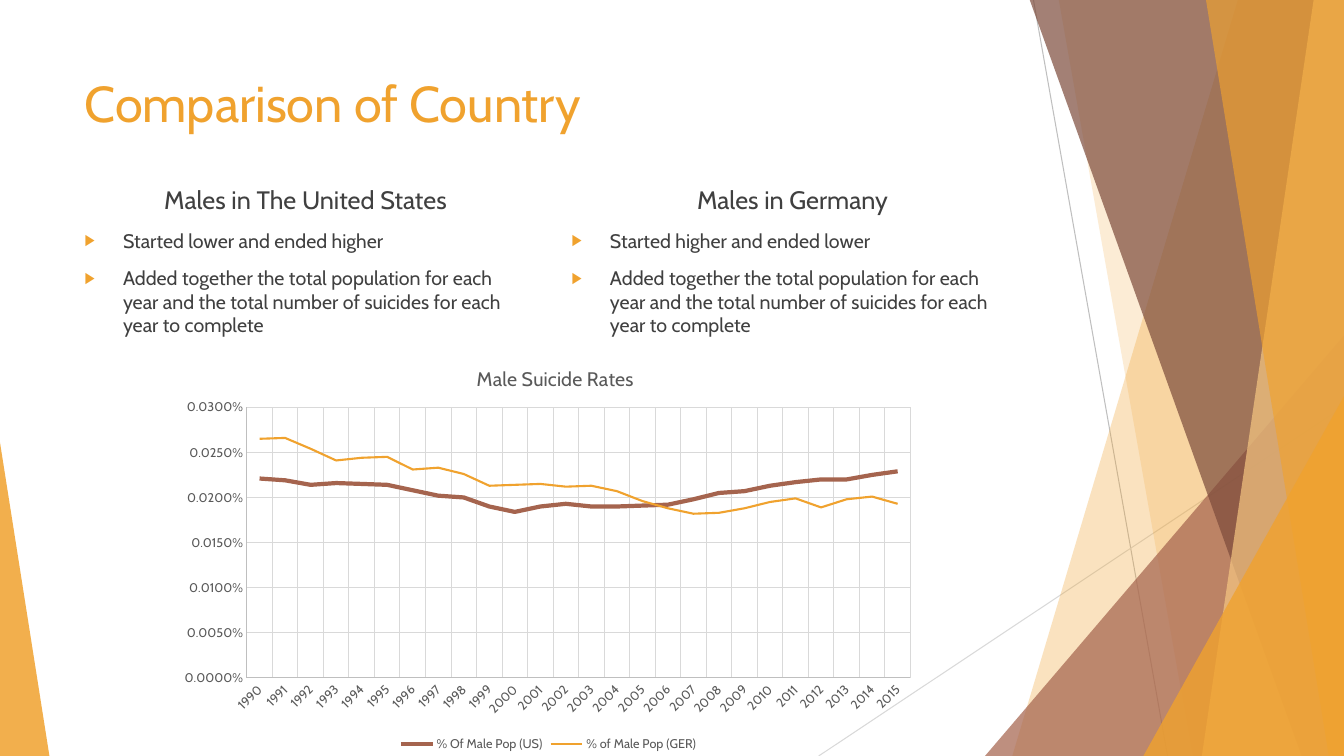
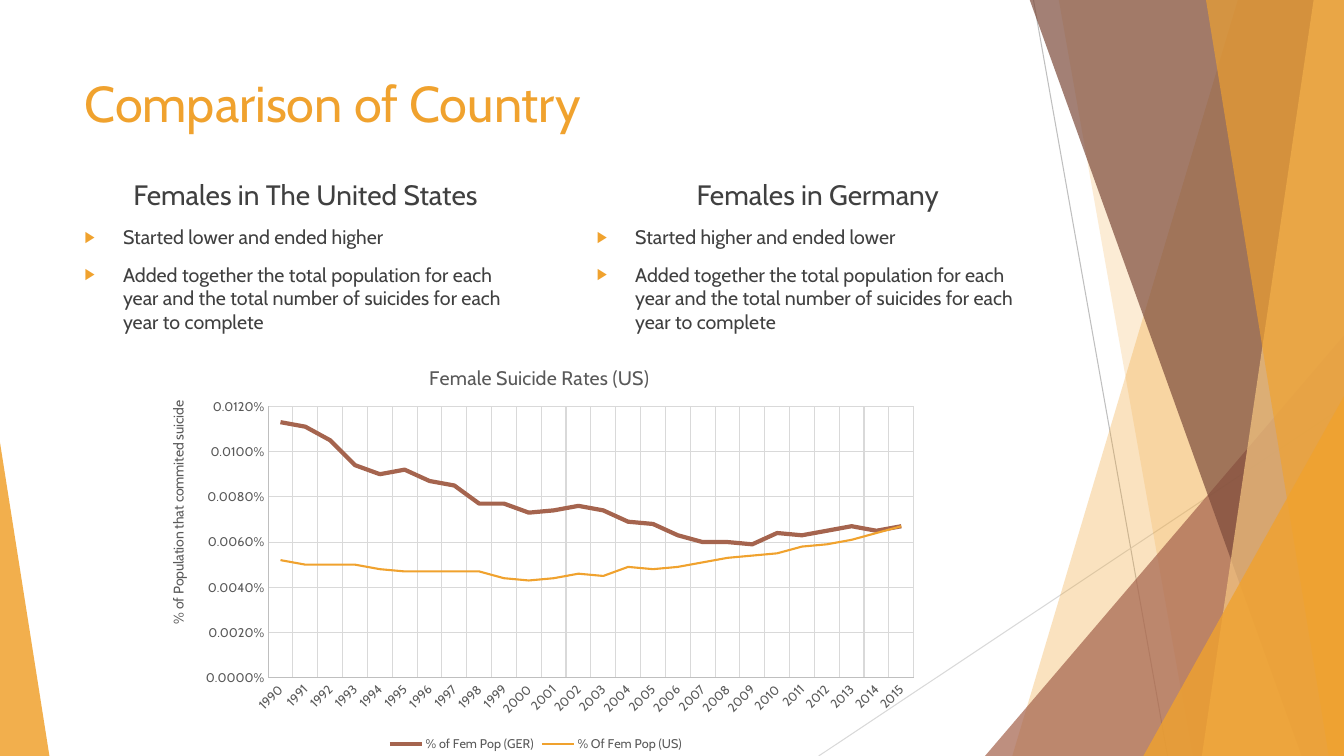
from lxml import etree
from pptx import Presentation
from pptx import util as u
from pptx.chart.data import CategoryChartData
from pptx.dml.color import RGBColor
from pptx.enum import chart as ch, shapes, text
from pptx.oxml import parse_xml
from pptx.oxml.ns import nsdecls, qn

FONT = "Cabin"
ORANGE, BROWN, DARK_BROWN, PALE = "F0A22E", "A5644E", "7C4B3B", "F6C782"
TEXT, CHART_TEXT, AXIS, GRID = "404040", "595959", "BFBFBF", "D9D9D9"
W, H = 13.33, 7.5
YEARS = [str(y) for y in range(1990, 2016)]
METHOD = ("Added together the total population for each year and the total "
          "number of suicides for each year to complete")
LOWER, HIGHER = "Started lower and ended higher", "Started higher and ended lower"

MALE_US = [221, 219, 214, 216, 215, 214, 208, 202, 200, 190, 184, 190, 193,
           190, 190, 191, 192, 198, 205, 207, 213, 217, 220, 220, 225, 229]
MALE_GER = [265, 266, 254, 241, 244, 245, 231, 233, 226, 213, 214, 215, 212,
            213, 207, 196, 188, 182, 183, 188, 195, 199, 189, 198, 201, 193]
FEM_GER = [113, 111, 105, 94, 90, 92, 87, 85, 77, 77, 73, 74, 76,
           74, 69, 68, 63, 60, 60, 59, 64, 63, 65, 67, 65, 67]
FEM_US = [52, 50, 50, 50, 48, 47, 47, 47, 47, 44, 43, 44, 46,
          45, 49, 48, 49, 51, 53, 54, 55, 58, 59, 61, 64, 67]


def rgb(value):
    return RGBColor.from_string(value)


def inches(*values):
    return [u.Inches(v) for v in values]


def style_font(font, size, color):
    font.name, font.size, font.bold = FONT, u.Pt(size), False
    font.color.rgb = rgb(color)


def style_line(line, color, width):
    line.color.rgb = rgb(color)
    line.width = u.Pt(width)


def tint(sp, color, alpha):
    sp.shadow.inherit = False
    sp.line.fill.background()
    sp.fill.solid()
    sp.fill.fore_color.rgb = rgb(color)
    clr = sp.fill._xPr.find(".//" + qn("a:srgbClr"))
    etree.SubElement(clr, qn("a:alpha")).set("val", str(alpha * 1000))


def add_line(group, start, end, color):
    c = group.shapes.add_connector(shapes.MSO_CONNECTOR.STRAIGHT,
                                   *inches(*start, *end))
    style_line(c.line, color, 0.75)
    etree.SubElement(c._element.spPr, qn("a:effectLst"))


def add_band(group, top_x, bottom_x, color, alpha):
    points = [inches(*p) for p in
              ((top_x, -0.01), (W, -0.01), (W, H), (bottom_x, H))]
    fb = group.shapes.build_freeform(*points[0])
    fb.add_line_segments(points[1:], close=True)
    tint(fb.convert_to_shape(), color, alpha)


def add_triangle(group, left, top, width, apex, color, alpha):
    sp = group.shapes.add_shape(shapes.MSO_SHAPE.ISOSCELES_TRIANGLE,
                                *inches(left, top, width, H - top))
    sp.adjustments[0] = apex
    tint(sp, color, alpha)


def decorate_layout(layout, s):
    group = s.shapes.add_group_shape()
    add_line(group, (10.25, 0), (11.58, H), AXIS)
    add_line(group, (W, 4.03), (8.12, H), GRID)
    add_band(group, 12.28, 10.04, ORANGE, 30)
    add_band(group, 10.5, 11.83, ORANGE, 20)
    add_triangle(group, 9.77, 3.33, 3.56, 1, BROWN, 72)
    add_band(group, 10.21, 12.91, DARK_BROWN, 70)
    add_band(group, 13.03, 11.92, PALE, 70)
    add_band(group, 11.96, 13.18, ORANGE, 65)
    add_triangle(group, 11.34, 3.93, 1.99, 1, ORANGE, 80)
    add_triangle(group, 0, 4.39, 0.49, 0, ORANGE, 85)
    for i, el in enumerate(group._element.iter(qn("p:cNvPr")), 101):
        el.set("id", str(i))
    layout.shapes._spTree.insert(2, group._element)


def place(sp, left, top, width, height):
    sp.left, sp.top, sp.width, sp.height = inches(left, top, width, height)


def setup_text(sp, *lines):
    tf = sp.text_frame
    tf.text = "\n".join(lines)
    tf.word_wrap = True
    tf.auto_size = text.MSO_AUTO_SIZE.NONE
    tf.vertical_anchor = text.MSO_ANCHOR.TOP
    return tf.paragraphs


def set_title(s, title):
    p, = setup_text(s.shapes.title, title)
    p.alignment = text.PP_ALIGN.LEFT
    style_font(p.runs[0].font, 36, ORANGE)


def set_bullet(p, indent):
    pPr = p._p.get_or_add_pPr()
    pPr.set("marL", str(u.Inches(indent)))
    pPr.set("indent", str(-u.Inches(indent)))
    if not indent:
        etree.SubElement(pPr, qn("a:buNone"))
        return
    clr = etree.SubElement(pPr, qn("a:buClr"))
    etree.SubElement(clr, qn("a:srgbClr")).set("val", ORANGE)
    etree.SubElement(pPr, qn("a:buSzPct")).set("val", "80000")
    etree.SubElement(pPr, qn("a:buChar")).set("char", "▶")


def fill_column(sp, left, top, heading, size, finding):
    place(sp, left, top, 4.58, 4.24)
    for i, p in enumerate(setup_text(sp, heading, finding, METHOD)):
        set_bullet(p, 0.38 if i else 0)
        p.space_before = u.Pt(10 if i else 0)
        p.alignment = text.PP_ALIGN.LEFT if i else text.PP_ALIGN.CENTER
        style_font(p.runs[0].font, 14 if i else size, TEXT)


def set_layout(parent, after, **fractions):
    old = parent.find(qn("c:layout"))
    if old is not None:
        parent.remove(old)
    target = "<c:layoutTarget val='inner'/>" if "w" in fractions else ""
    modes = "".join(f"<c:{k}Mode val='edge'/>" for k in "xy")
    sizes = "".join(f"<c:{k} val='{v}'/>" for k, v in fractions.items())
    el = parse_xml(f"<c:layout {nsdecls('c')}><c:manualLayout>{target}"
                   f"{modes}{sizes}</c:manualLayout></c:layout>")
    if after is None:
        parent.insert(0, el)
    else:
        parent.find(qn(after)).addnext(el)


def set_chart_title(title, words, size, **position):
    title.text_frame.text = words
    style_font(title.text_frame.paragraphs[0].runs[0].font, size, CHART_TEXT)
    set_layout(title._element, "c:tx", **position)


def style_axis(axis):
    axis.major_tick_mark = axis.minor_tick_mark = ch.XL_TICK_MARK.NONE
    axis.has_major_gridlines = True
    style_line(axis.major_gridlines.format.line, GRID, 0.75)
    style_line(axis.format.line, AXIS, 0.75)
    style_font(axis.tick_labels.font, 9, CHART_TEXT)


def add_rate_chart(s, box, title, title_at, series, top, step, plot):
    data = CategoryChartData(number_format="0.0000%")
    data.categories = YEARS
    for name, per_million in series:
        data.add_series(name, [v / 1e6 for v in per_million])
    chart = s.shapes.add_chart(ch.XL_CHART_TYPE.LINE, *inches(*box), data).chart
    style_font(chart.font, 10, "000000")
    chart.has_title = True
    set_chart_title(chart.chart_title, title, 14, **title_at)
    chart.has_legend = True
    chart.legend.position = ch.XL_LEGEND_POSITION.BOTTOM
    chart.legend.include_in_layout = False
    style_font(chart.legend.font, 9, CHART_TEXT)
    cat, val = chart.category_axis, chart.value_axis
    style_axis(cat)
    style_axis(val)
    cat._element.find(qn("c:txPr")).find(qn("a:bodyPr")).set("rot", "-2700000")
    val.minimum_scale, val.maximum_scale, val.major_unit = 0, top, step
    val.tick_labels.number_format = "0.0000%"
    val.tick_labels.number_format_is_linked = False
    chart.plots[0].vary_by_categories = False
    for ser, color, width in zip(chart.plots[0].series, (BROWN, ORANGE), (3, 1.5)):
        ser.smooth = False
        ser.marker.style = ch.XL_MARKER_STYLE.NONE
        style_line(ser.format.line, color, width)
    set_layout(chart._chartSpace.find(".//" + qn("c:plotArea")), None, **plot)
    return chart


def add_comparison(prs, layout, group, size, top, right_left):
    s = prs.slides.add_slide(layout)
    set_title(s, "Comparison of Country")
    left, right = s.placeholders[1], s.placeholders[2]
    fill_column(left, 0.74, top, f"{group} in The United States", size, LOWER)
    fill_column(right, right_left, top, f"{group} in Germany", size, HIGHER)
    return s


def main():
    prs = Presentation()
    prs.slide_width, prs.slide_height = inches(W, H)
    layout = prs.slide_layouts[3]
    place(layout.placeholders[0], 0.74, 0.67, 9.4, 1.44)

    s = add_comparison(prs, layout, "Males", 18, 1.78, 5.57)
    decorate_layout(layout, s)
    add_rate_chart(s, (1.7, 3.43, 7.48, 4.07), "Male Suicide Rates",
                   dict(x=0.4, y=0.04),
                   [("% Of Male Pop (US)", MALE_US),
                    ("% of Male Pop (GER)", MALE_GER)],
                   0.0003, 0.00005, dict(x=0.1, y=0.15, w=0.88, h=0.66))

    s = add_comparison(prs, layout, "Females", 20, 1.71, 5.82)
    chart = add_rate_chart(s, (1.41, 3.42, 7.81, 4.08),
                           "Female Suicide Rates (US)", dict(x=0.36, y=0.04),
                           [("% of Fem Pop (GER)", FEM_GER),
                            ("% Of Fem Pop (US)", FEM_US)],
                           0.00012, 0.00002,
                           dict(x=0.16, y=0.15, w=0.82, h=0.66))
    axis_title = chart.value_axis.axis_title
    set_chart_title(axis_title, "% of Population that commited suicide", 10,
                    x=0.03, y=0.13)
    axis_title._element.find(".//" + qn("a:bodyPr")).set("rot", "-5400000")
    prs.save("out.pptx")


if __name__ == "__main__":
    main()
